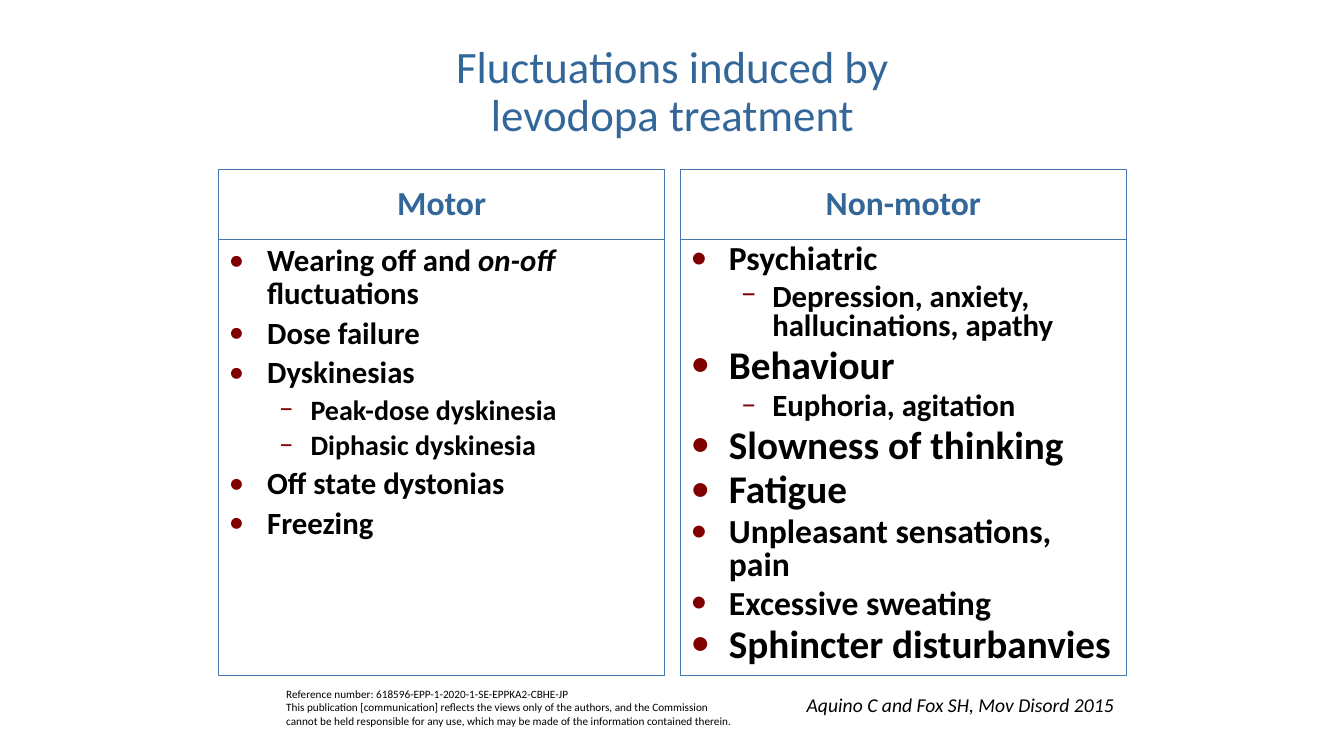
from lxml.etree import SubElement
from pptx import Presentation
from pptx.dml.color import RGBColor
from pptx.enum.text import MSO_ANCHOR, MSO_AUTO_SIZE, PP_ALIGN
from pptx.oxml.ns import qn
from pptx.util import Inches, Pt

COLORS = {"blue": "336699", "edge": "4776AE", "mark": "800000",
          "text": "000000", "white": "FFFFFF"}
FONT = "Calibri"
TOP, HEAD, BODY, WIDTH = 1.68, 0.7, 4.32, 4.42
INDENTS = [(0.38, -0.38), (0.81, -0.31)]

# Each item: level, text, size, bullet; asterisks enclose italics.
MOTOR = [
    (0, "Wearing off and *on-off* fluctuations", 22, "•"),
    (0, "Dose failure", 22, "•"),
    (0, "Dyskinesias", 22, "•"),
    (1, "Peak-dose dyskinesia", 20, "−"),
    (1, "Diphasic dyskinesia", 20, "−"),
    (0, "Off state dystonias", 22, "•"),
    (0, "Freezing", 22, "•"),
]
OTHER = [
    (0, "Psychiatric", 24, "•"),
    (1, "Depression, anxiety, hallucinations, apathy", 22, "−"),
    (0, "Behaviour", 28, "•"),
    (1, "Euphoria, agitation", 22, "–"),
    (0, "Slowness of thinking", 28, "•"),
    (0, "Fatigue", 28, "•"),
    (0, "Unpleasant sensations, pain", 24, "•"),
    (0, "Excessive sweating", 24, "•"),
    (0, "Sphincter disturbanvies", 28, "•"),
]
# Each column: left, heading, items, line spacing, space before by level.
COLUMNS = [
    (2.17, "Motor", MOTOR, 0.9, (4.4, 4)),
    (6.75, "Non-motor", OTHER, 0.8, (4.8, 4.4)),
]


def rgb(name):
    return RGBColor.from_string(COLORS[name])


def place(shape, left, top, width, height, anchor=MSO_ANCHOR.TOP):
    """Set the bounds of a shape and the layout of its text frame."""
    shape.left, shape.top = Inches(left), Inches(top)
    shape.width, shape.height = Inches(width), Inches(height)
    frame = shape.text_frame
    frame.word_wrap = True
    frame.auto_size = MSO_AUTO_SIZE.NONE
    frame.vertical_anchor = anchor
    frame.margin_left = frame.margin_right = Inches(0.1)
    frame.margin_top = frame.margin_bottom = Inches(0.05)
    return frame


def write(para, text, size, color="text", bold=False, italic=False,
          align=PP_ALIGN.LEFT, spacing=1.0, before=0):
    """Fill a paragraph; asterisks switch italics, newlines break lines."""
    para.alignment = align
    para.line_spacing = spacing
    para.space_before = Pt(before)
    for part, piece in enumerate(text.split("*")):
        for row, line in enumerate(piece.split("\n")):
            if row:
                para.add_line_break()
            run = para.add_run()
            run.text = line
            font = run.font
            font.name, font.size = FONT, Pt(size)
            font.bold, font.italic = bold, italic or part % 2 == 1
            font.color.rgb = rgb(color)


def mark(para, level, char):
    """Give a paragraph its level, hanging indent and bullet."""
    para.level = level
    props = para._p.get_or_add_pPr()
    margin, indent = INDENTS[level]
    props.set("marL", str(Inches(margin)))
    props.set("indent", str(Inches(indent)))
    tint = SubElement(props, qn("a:buClr"))
    SubElement(tint, qn("a:srgbClr"), val=COLORS["mark"])
    SubElement(props, qn("a:buFont"), typeface=FONT)
    SubElement(props, qn("a:buChar"), char=char)


def outline(shape):
    shape.line.color.rgb = rgb("edge")
    shape.line.width = Pt(0.75)


def column(head, body, left, title, items, spacing, gaps):
    """Build a heading box with a list box under it."""
    frame = place(head, left, TOP, WIDTH, HEAD, MSO_ANCHOR.MIDDLE)
    write(frame.paragraphs[0], title, 24, color="blue", bold=True,
          align=PP_ALIGN.CENTER, spacing=0.9)
    outline(head)

    frame = place(body, left, TOP + HEAD, WIDTH, BODY)
    for num, (level, text, size, char) in enumerate(items):
        para = frame.add_paragraph() if num else frame.paragraphs[0]
        mark(para, level, char)
        write(para, text, size, bold=True, spacing=spacing,
              before=gaps[level] if num else 0)
    outline(body)


def note(slide, text, left, top, width, height, size, **style):
    box = slide.shapes.add_textbox(0, 0, 0, 0)
    frame = place(box, left, top, width, height)
    write(frame.paragraphs[0], text, size, **style)


def main():
    deck = Presentation()
    deck.slide_width, deck.slide_height = Inches(13.33), Inches(7.5)
    slide = deck.slides.add_slide(deck.slide_layouts.get_by_name("Comparison"))
    slide.background.fill.solid()
    slide.background.fill.fore_color.rgb = rgb("white")

    title, *boxes = slide.placeholders
    frame = place(title, 2.17, 0.3, 9, 1.25, MSO_ANCHOR.MIDDLE)
    write(frame.paragraphs[0], "Fluctuations induced by\nlevodopa treatment",
          32, color="blue", align=PP_ALIGN.CENTER, spacing=0.9)
    for head, body, data in zip(boxes[::2], boxes[1::2], COLUMNS):
        column(head, body, *data)

    note(slide, "Reference number: 618596-EPP-1-2020-1-SE-EPPKA2-CBHE-JP\n"
         "This publication [communication] reflects the views only of the "
         "authors, and the Commission cannot be held responsible for any use, "
         "which may be made of the information contained therein.",
         2.74, 6.77, 4.64, 0.5, 8)
    note(slide, "Aquino C and Fox SH, Mov Disord 2015",
         7.83, 6.83, 3.32, 0.34, 14, italic=True, align=PP_ALIGN.RIGHT)
    deck.save("out.pptx")


if __name__ == "__main__":
    main()
